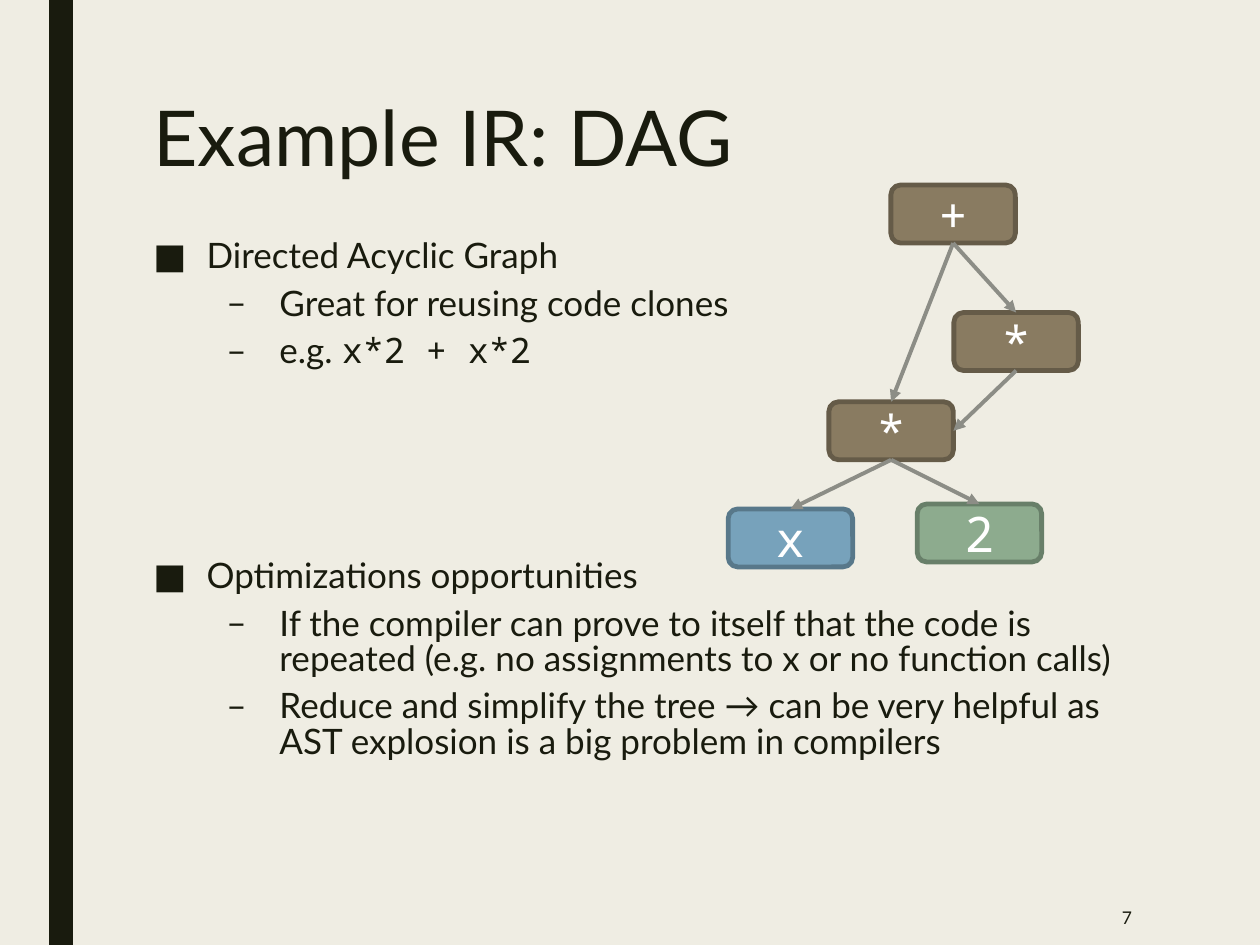
"""Build a slide on a directed acyclic graph as an intermediate representation."""
from lxml import etree
from pptx import Presentation, util as u
from pptx.dml.color import RGBColor
from pptx.enum import shapes, text
from pptx.oxml.ns import qn

THEME = {
    "paper": "EFEDE3", "ink": "191B0E", "white": "FFFFFF", "arrow": "8C8D86",
    "operator": ("897B61", "655B48"),
    "variable": ("77A2BB", "58788A"),
    "constant": ("8DAB8E", "687F69"),
    "sans": "Lato", "mono": "Noto Sans Mono",
    "title": 44, "body": 20, "node": 28, "number": 10,
}


def color(name):
    return RGBColor.from_string(THEME.get(name, name))


def write(para, words, size, face="sans", ink="ink"):
    span = para.add_run()
    span.text = words
    look = {"name": THEME[face], "size": u.Pt(THEME[size])}
    for key, value in look.items():
        setattr(span.font, key, value)
    span.font.color.rgb = color(ink)


deck = Presentation()
deck.slide_width, deck.slide_height = u.Cm(25.4), u.Cm(19.05)
page = deck.slides.add_slide(deck.slide_layouts[1])
page.background.fill.solid()
page.background.fill.fore_color.rgb = color("paper")

bar = page.shapes.add_shape(shapes.MSO_SHAPE.RECTANGLE, u.Cm(0.99), 0, u.Cm(0.48), deck.slide_height)
bar.shadow.inherit = False
bar.fill.solid()
bar.fill.fore_color.rgb = color("ink")
bar.line.fill.background()

title, body = page.shapes.title, page.placeholders[1]
for box, top, height in [(title, 1.9, 2.82), (body, 4.72, 11.58)]:
    place = {"left": u.Cm(2.84), "top": u.Cm(top), "width": u.Cm(20.02), "height": u.Cm(height)}
    for key, value in place.items():
        setattr(box, key, value)
    frame = {"word_wrap": True, "auto_size": text.MSO_AUTO_SIZE.NONE, "vertical_anchor": text.MSO_ANCHOR.TOP}
    for key, value in frame.items():
        setattr(box.text_frame, key, value)

heading = title.text_frame.paragraphs[0]
heading.alignment = text.PP_ALIGN.LEFT
heading.line_spacing = 0.89
write(heading, "Example IR: DAG", "title")

points = [
    (0, 0, [("Directed Acyclic Graph", "sans")]),
    (1, 5, [("Great for reusing code clones", "sans")]),
    (1, 5, [("e.g. ", "sans"), ("x*2 + x*2", "mono")]),
    (0, 106.3, [("Optimizations opportunities", "sans")]),
    (1, 5, [("If the compiler can prove to itself that the code is repeated "
             "(e.g. no assignments to x or no function calls)", "sans")]),
    (1, 5, [("Reduce and simplify the tree → can be very helpful as "
             "AST explosion is a big problem in compilers", "sans")]),
]
for index, (level, before, spans) in enumerate(points):
    para = body.text_frame.add_paragraph() if index else body.text_frame.paragraphs[0]
    layout = {"level": level, "line_spacing": 0.84, "space_before": u.Pt(before), "space_after": u.Pt(2)}
    for key, value in layout.items():
        setattr(para, key, value)
    properties = para._p.get_or_add_pPr()
    properties.set("marL", str(u.Cm((1.07, 2.54)[level])))
    properties.set("indent", str(u.Cm(-1.07)))
    etree.SubElement(properties, qn("a:buFont"), typeface=THEME["sans"])
    etree.SubElement(properties, qn("a:buChar"), char="■–"[level])
    for words, face in spans:
        write(para, words, "body", face)

number = page.shapes.add_textbox(u.Cm(19.74), u.Cm(17.93), u.Cm(3.33), u.Cm(1.12))
number.text_frame.word_wrap = True
number.text_frame.vertical_anchor = text.MSO_ANCHOR.MIDDLE
number.text_frame.paragraphs[0].alignment = text.PP_ALIGN.RIGHT
write(number.text_frame.paragraphs[0], "7", "number")

nodes = {}
for name, label, kind, left, top in [
    ("sum", "+", "operator", 17.96, 3.73),
    ("shared product", "*", "operator", 16.71, 8.1),
    ("repeated product", "*", "operator", 19.23, 6.3),
    ("x", "x", "variable", 14.68, 10.26),
    ("two", "2", "constant", 18.49, 10.16),
]:
    node = page.shapes.add_shape(
        shapes.MSO_SHAPE.ROUNDED_RECTANGLE, u.Cm(left), u.Cm(top), u.Cm(2.51), u.Cm(1.17))
    fill, edge = THEME[kind]
    node.shadow.inherit = False
    node.fill.solid()
    node.fill.fore_color.rgb = color(fill)
    node.line.color.rgb = color(edge)
    node.line.width = u.Pt(2.75)
    node.text_frame.vertical_anchor = text.MSO_ANCHOR.MIDDLE
    para = node.text_frame.paragraphs[0]
    para.alignment = text.PP_ALIGN.CENTER
    write(para, label, "node", "mono", "white")
    nodes[name] = node

for parent, child, side in [
    ("sum", "repeated product", 0),
    ("sum", "shared product", 0),
    ("shared product", "x", 0),
    ("shared product", "two", 0),
    ("repeated product", "shared product", 3),
]:
    arrow = page.shapes.add_connector(shapes.MSO_CONNECTOR.STRAIGHT, 0, 0, 0, 0)
    arrow.begin_connect(nodes[parent], 2)
    arrow.end_connect(nodes[child], side)
    arrow.line.color.rgb = color("arrow")
    arrow.line.width = u.Pt(2.25)
    etree.SubElement(arrow.line._get_or_add_ln(), qn("a:tailEnd"), type="triangle")
    etree.SubElement(arrow._element.spPr, qn("a:effectLst"))

deck.save("out.pptx")
